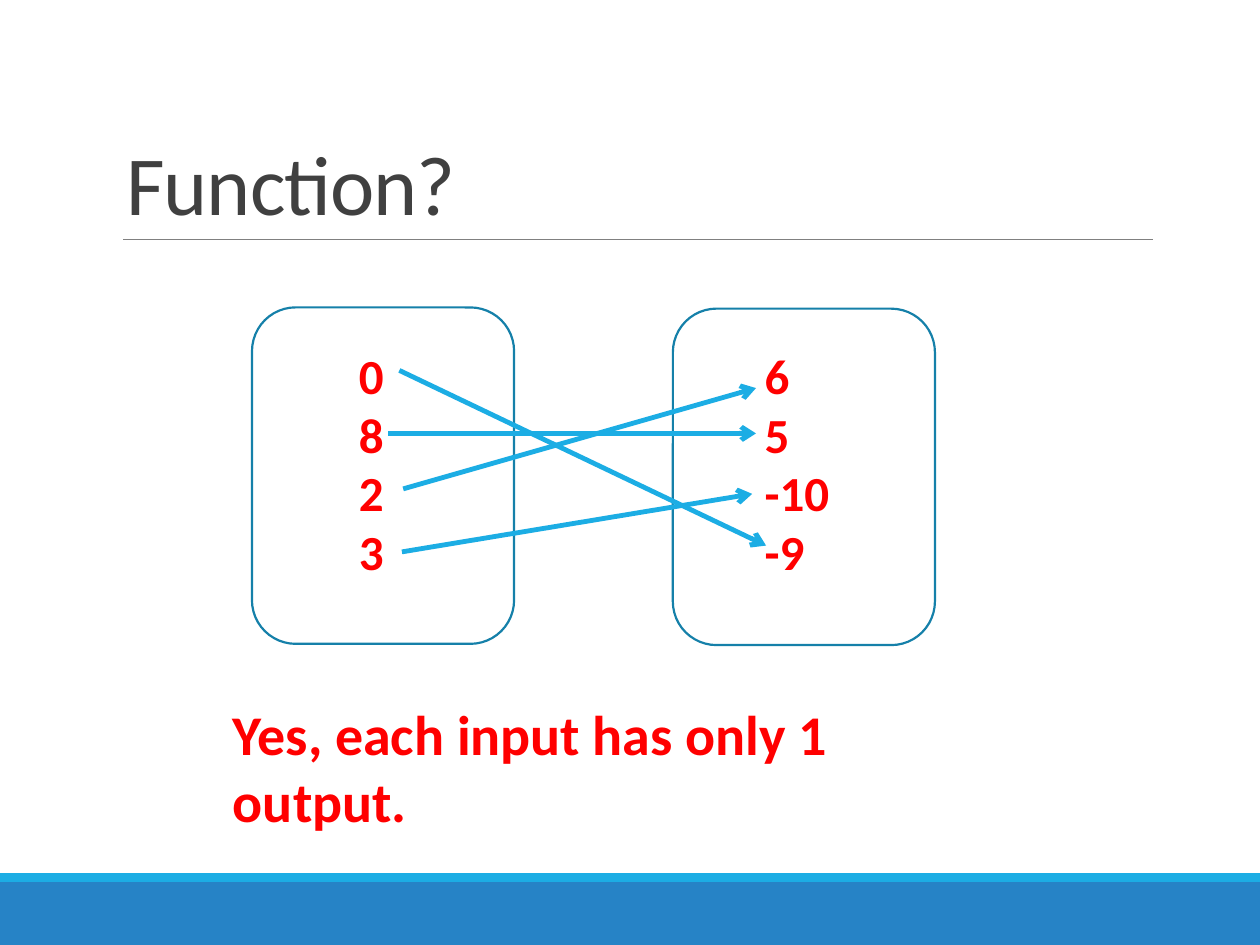
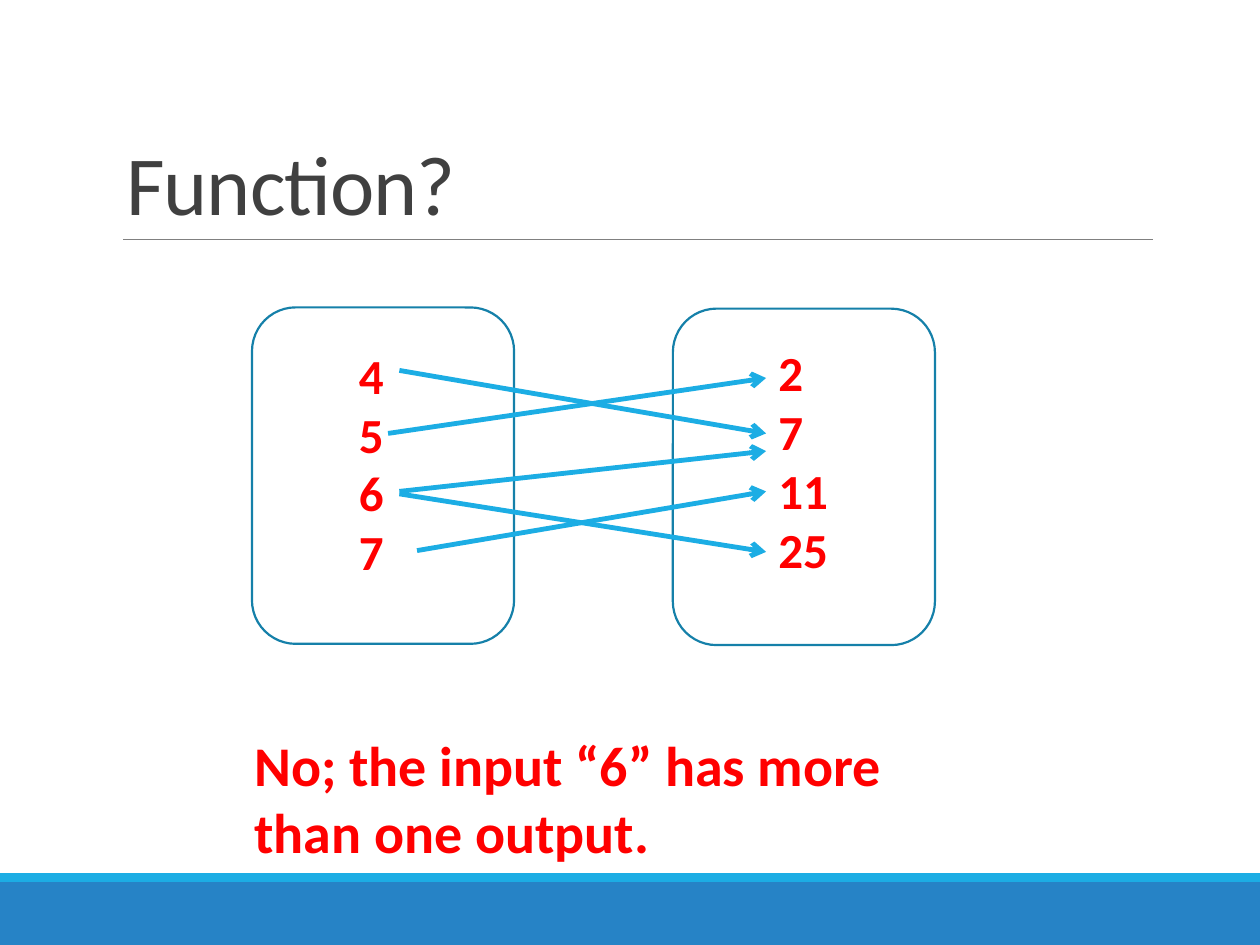
from dataclasses import dataclass

from lxml import etree
from pptx import Presentation
from pptx.dml.color import RGBColor
from pptx.enum.shapes import MSO_CONNECTOR, MSO_SHAPE
from pptx.enum.text import MSO_ANCHOR, MSO_AUTO_SIZE, PP_ALIGN
from pptx.oxml.ns import qn
from pptx.util import Inches, Pt

STRAIGHT = MSO_CONNECTOR.STRAIGHT
RECTANGLE = MSO_SHAPE.RECTANGLE
ROUNDED = MSO_SHAPE.ROUNDED_RECTANGLE
TOP, BOTTOM = MSO_ANCHOR.TOP, MSO_ANCHOR.BOTTOM
LEFT = PP_ALIGN.LEFT
NO_FIT = MSO_AUTO_SIZE.NONE
TITLE_ONLY = 5


@dataclass(frozen=True)
class Theme:
    font: str = "Calibri"
    title: str = "404040"
    rule: str = "808080"
    band: str = "2683C6"
    accent: str = "1CADE4"
    outline: str = "1580A9"
    answer: str = "FF0000"
    title_size: int = 48
    value_size: int = 28
    verdict_size: int = 32


THEME = Theme()

MAPPINGS = [
    {
        "title": "Function?",
        "inputs": ["0", "8", "2", "3"],
        "outputs": ["6", "5", "-10", "-9"],
        "outputs_at": (5.97, 2.69),
        "arrows": [
            ((3.17, 2.94), (6.08, 4.33)),
            ((3.08, 3.44), (6, 3.44)),
            ((3.2, 3.88), (6, 3.08)),
            ((3.19, 4.38), (5.97, 3.92)),
        ],
        "verdict": "Yes, each input has only 1 output.",
        "verdict_at": (1.75, 5.5),
    },
    {
        "title": "Function?",
        "inputs": ["4", "5", "6", "7"],
        "outputs": ["2", "7", "11", "25"],
        "outputs_at": (6.08, 2.67),
        "arrows": [
            ((3.17, 2.94), (6.08, 3.44)),
            ((3.08, 3.44), (6.08, 3)),
            ((3.17, 3.9), (6.08, 3.58)),
            ((3.31, 4.37), (6.08, 3.9)),
            ((3.17, 3.92), (6.08, 4.38)),
        ],
        "verdict": "No; the input “6” has more than one output.",
        "verdict_at": (1.92, 5.75),
    },
]

BANDS = [((0, 7, 10, 0.5), THEME.band), ((0, 6.93, 10, 0.07), THEME.accent)]
TITLE_AREA = (0.9, 0.31, 8.25, 1.59)
TITLE_RULE = ((0.98, 1.9), (9.15, 1.9))
SET_OUTLINES = [(2, 2.44), (5.34, 2.45)]
SET_SIZE = (2.08, 2.67)
INPUTS_AT = (2.75, 2.69)
VALUES_SIZE = (1.83, 1.99)
VERDICT_SIZE = (5.58, 1.18)


def inches(values):
    return [Inches(value) for value in values]


def write(box, lines, size, color, bold=False, anchor=TOP, line_spacing=1.0, tracking=None):
    frame = box.text_frame
    frame.word_wrap = True
    frame.auto_size = NO_FIT
    frame.vertical_anchor = anchor
    for index, line in enumerate(lines):
        para = frame.add_paragraph() if index else frame.paragraphs[0]
        para.alignment = LEFT
        para.line_spacing = line_spacing
        span = para.add_run()
        span.text = line
        span.font.name = THEME.font
        span.font.size = Pt(size)
        span.font.bold = bold
        span.font.color.rgb = RGBColor.from_string(color)
        if tracking is not None:
            span._r.get_or_add_rPr().set("spc", str(int(tracking * 100)))


def add_text(page, area, lines, **text_format):
    box = page.shapes.add_textbox(*inches(area))
    write(box, lines, **text_format)


def add_panel(page, kind, area, fill=None, outline=None):
    shape = page.shapes.add_shape(kind, *inches(area))
    shape.shadow.inherit = False
    if fill:
        shape.fill.solid()
        shape.fill.fore_color.rgb = RGBColor.from_string(fill)
    else:
        shape.fill.background()
    if outline:
        shape.line.color.rgb = RGBColor.from_string(outline)
        shape.line.width = Pt(1.25)
    else:
        shape.line.fill.background()


def add_line(page, start, end, color, width, arrow=False):
    line = page.shapes.add_connector(STRAIGHT, *inches(start + end))
    line.line.color.rgb = RGBColor.from_string(color)
    line.line.width = Pt(width)
    properties = line._element.spPr
    if arrow:
        etree.SubElement(properties.find(qn("a:ln")), qn("a:tailEnd"), type="arrow")
    etree.SubElement(properties, qn("a:effectLst"))


def add_frame(page, title):
    for area, color in BANDS:
        add_panel(page, RECTANGLE, area, fill=color)
    add_line(page, *TITLE_RULE, THEME.rule, 0.5)
    box = page.shapes.title
    box.left, box.top, box.width, box.height = inches(TITLE_AREA)
    write(box, [title], size=THEME.title_size, color=THEME.title,
          anchor=BOTTOM, line_spacing=0.85, tracking=-0.5)


def add_mapping(deck, mapping):
    page = deck.slides.add_slide(deck.slide_layouts[TITLE_ONLY])
    add_frame(page, mapping["title"])
    for place in SET_OUTLINES:
        add_panel(page, ROUNDED, place + SET_SIZE, outline=THEME.outline)
    for place, values in ((INPUTS_AT, mapping["inputs"]),
                          (mapping["outputs_at"], mapping["outputs"])):
        add_text(page, place + VALUES_SIZE, values,
                 size=THEME.value_size, color=THEME.answer, bold=True)
    for start, end in mapping["arrows"]:
        add_line(page, start, end, THEME.accent, 2.75, arrow=True)
    add_text(page, mapping["verdict_at"] + VERDICT_SIZE, [mapping["verdict"]],
             size=THEME.verdict_size, color=THEME.answer, bold=True)


def main():
    deck = Presentation()
    deck.slide_width, deck.slide_height = inches((10, 7.5))
    for mapping in MAPPINGS:
        add_mapping(deck, mapping)
    deck.save("out.pptx")


if __name__ == "__main__":
    main()
